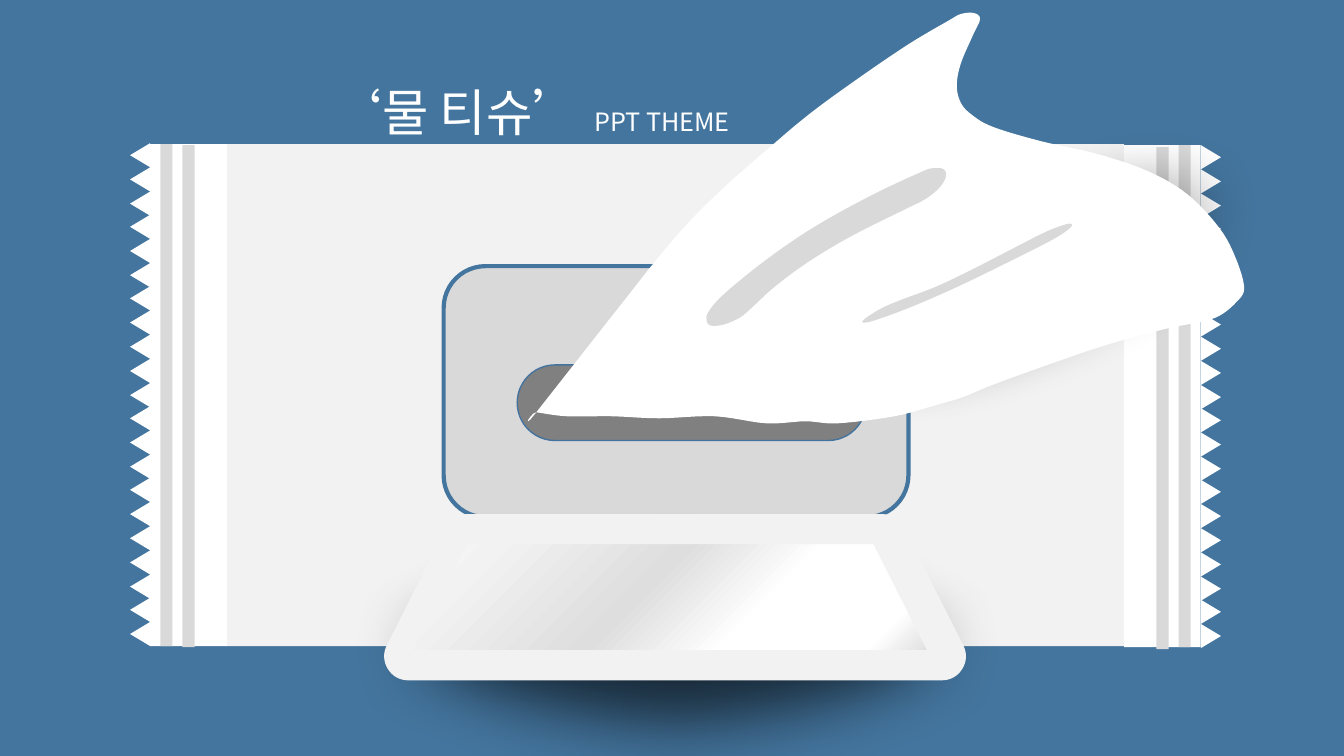
"""Build the wet tissue title slide."""
import dataclasses
import typing

import pptx
import pptx.dml.color
import pptx.enum.shapes
import pptx.enum.text
import pptx.oxml
import pptx.oxml.ns
import pptx.util

PX = 9144
KIND = pptx.enum.shapes.MSO_SHAPE
Point = typing.Tuple[int, int]
Stops = typing.Tuple[typing.Tuple[int, str], ...]


@dataclasses.dataclass(frozen=True)
class Theme:
    background: str = "44759E"
    white: str = "FFFFFF"
    film: str = "F2F2F2"
    grey: str = "D9D9D9"
    slot: str = "808080"
    slot_edge: str = "43739E"
    shadow: str = "000000"
    shadow_alpha: int = 67
    soft_edge: int = 50
    font: str = "Noto Sans CJK KR"
    title_size: int = 36
    subtitle_size: int = 18


@dataclasses.dataclass(frozen=True)
class Gradient:
    stops: Stops
    direction: str


@dataclasses.dataclass(frozen=True)
class Block:
    kind: KIND
    left: int
    top: int
    width: int
    height: int
    fill: str
    rotation: float = 0
    corner: typing.Optional[float] = None
    line: str = ""
    line_width: float = 0
    gradient: typing.Optional[Gradient] = None
    soft: bool = False


@dataclasses.dataclass(frozen=True)
class Outline:
    fill: str
    points: typing.Tuple[Point, ...]


THEME = Theme()

LID_BACK = Gradient(
    ((0, "D9D9D9"), (12, "FFFFFF"), (56, "FFFFFF"), (73, "DEDEDE"), (85, "F2F2F2"), (100, "FFFFFF")),
    '<a:lin ang="0" scaled="0"/>',
)
LID_FRONT = Gradient(
    ((0, "D9D9D9"), (12, "FFFFFF"), (34, "FFFFFF"), (55, "DEDEDE"), (85, "F2F2F2"), (100, "FFFFFF")),
    '<a:path path="circle"><a:fillToRect l="100000" t="100000"/></a:path>'
    '<a:tileRect r="-100000" b="-100000"/>',
)


def teeth(left: int, top: int, rotation: int) -> typing.List[Block]:
    """Return one column of sawtooth triangles."""
    return [
        Block(KIND.ISOSCELES_TRIANGLE, left, top + round(index * 475 / 20), 24, 20, THEME.white, rotation)
        for index in range(21)
    ]


def strip(left: int, top: int, width: int, fill: str) -> Block:
    """Return a full-height strip of the package."""
    return Block(KIND.RECTANGLE, left, top, width, 498, fill)


PACKAGE = [
    strip(225, 143, 890, THEME.film),
    *teeth(127, 144, 270),
    strip(149, 143, 76, THEME.white),
    strip(159, 143, 12, THEME.grey),
    strip(181, 144, 12, THEME.grey),
    *teeth(1189, 146, 90),
    strip(1115, 144, 76, THEME.white),
    strip(1169, 144, 12, THEME.grey),
    strip(1147, 146, 12, THEME.grey),
]
OPENING = [
    Block(KIND.OVAL, 891, -13, 269, 573, THEME.shadow, 69.9, soft=True),
    Block(KIND.ROUNDED_RECTANGLE, 440, 264, 461, 249, THEME.grey, line=THEME.background, line_width=3),
    Block(KIND.ROUNDED_RECTANGLE, 513, 362, 346, 75, THEME.slot, corner=0.5, line=THEME.slot_edge, line_width=1),
]
LID = [
    Block(KIND.OVAL, 527, 262, 289, 762, THEME.shadow, 90, soft=True),
    Block(KIND.TRAPEZOID, 405, 534, 529, 117, THEME.white, corner=0.505,
          line=THEME.film, line_width=34.5, gradient=LID_BACK),
    Block(KIND.TRAPEZOID, 400, 534, 529, 117, THEME.white, corner=0.505,
          line=THEME.film, line_width=8.5, gradient=LID_FRONT),
]
TISSUE = [
    Outline(THEME.white, (
        (1192, 319), (1153, 327), (1098, 342), (1042, 361), (984, 382), (955, 394), (928, 402),
        (887, 413), (831, 420), (799, 418), (760, 420), (709, 413), (654, 415), (607, 413),
        (562, 413), (532, 409), (532, 409), (631, 283), (646, 264), (679, 225), (717, 187),
        (759, 150), (803, 113), (851, 78), (901, 44), (940, 21), (953, 14), (966, 13), (972, 19),
        (965, 35), (953, 63), (949, 85), (953, 102), (964, 114), (985, 126), (1032, 140),
        (1089, 153), (1139, 170), (1178, 193), (1210, 227), (1226, 257), (1234, 286),
        (1226, 300), (1210, 313),
    )),
    Outline(THEME.grey, (
        (701, 318), (703, 309), (719, 291), (761, 257), (808, 225), (864, 194), (913, 171),
        (925, 167), (936, 168), (938, 176), (931, 187), (917, 198), (895, 209), (845, 234),
        (803, 259), (769, 284), (746, 305), (734, 315), (718, 322), (705, 323),
    )),
    Outline(THEME.grey, (
        (856, 320), (867, 318), (900, 306), (942, 288), (986, 267), (1036, 242), (1055, 231),
        (1063, 224), (1060, 222), (1047, 226), (1031, 233), (998, 250), (961, 269), (927, 285),
        (895, 297), (876, 305), (864, 312), (857, 317),
    )),
]


def colour(value: str) -> pptx.dml.color.RGBColor:
    """Turn a hex string into a colour."""
    return pptx.dml.color.RGBColor.from_string(value)


def drawing_xml(tag: str, attributes: str = "", content: str = "") -> typing.Any:
    """Make one DrawingML element."""
    namespace = pptx.oxml.ns.nsdecls("a")
    return pptx.oxml.parse_xml(f"<a:{tag} {namespace} {attributes}>{content}</a:{tag}>")


def paint(shape: typing.Any, fill: str) -> None:
    """Give a shape a plain fill without line or shadow."""
    shape.shadow.inherit = False
    shape.fill.solid()
    shape.fill.fore_color.rgb = colour(fill)
    shape.line.fill.background()


def soften(shape: typing.Any) -> None:
    """Make a shape translucent with a feathered edge."""
    properties = shape._element.spPr
    tint = properties.find(pptx.oxml.ns.qn("a:solidFill"))[0]
    tint.append(drawing_xml("alpha", f'val="{THEME.shadow_alpha * 1000}"'))
    effects = properties.find(pptx.oxml.ns.qn("a:effectLst"))
    effects.append(drawing_xml("softEdge", f'rad="{pptx.util.Pt(THEME.soft_edge)}"'))


def apply_gradient(shape: typing.Any, gradient: Gradient) -> None:
    """Replace the plain fill of a shape by a gradient."""
    stops = "".join(
        f'<a:gs pos="{position * 1000}"><a:srgbClr val="{value}"/></a:gs>'
        for position, value in gradient.stops
    )
    properties = shape._element.spPr
    plain = properties.find(pptx.oxml.ns.qn("a:solidFill"))
    content = f"<a:gsLst>{stops}</a:gsLst>{gradient.direction}"
    properties.replace(plain, drawing_xml("gradFill", 'rotWithShape="1"', content))


def draw_block(slide: typing.Any, block: Block) -> None:
    """Draw one preset shape."""
    frame = (value * PX for value in (block.left, block.top, block.width, block.height))
    shape = slide.shapes.add_shape(block.kind, *frame)
    shape.rotation = block.rotation
    paint(shape, block.fill)
    if block.corner is not None:
        shape.adjustments[0] = block.corner
    if block.line:
        shape.line.color.rgb = colour(block.line)
        shape.line.width = pptx.util.Pt(block.line_width)
        shape.line._get_or_add_ln().append(drawing_xml("round"))
    if block.gradient:
        apply_gradient(shape, block.gradient)
    if block.soft:
        soften(shape)


def smooth(points: typing.Sequence[Point], steps: int = 6) -> typing.List[Point]:
    """Run a closed Catmull-Rom curve through the points, in EMU."""
    curve = []
    for index in range(len(points)):
        corners = [points[(index + offset) % len(points)] for offset in (-1, 0, 1, 2)]
        for step in range(steps):
            t = step / steps
            curve.append(tuple(
                round(PX * (b + t * (c - a) / 2 + t * t * (2 * a - 5 * b + 4 * c - d) / 2
                            + t ** 3 * (3 * b - a - 3 * c + d) / 2))
                for a, b, c, d in zip(*corners)
            ))
    return curve


def draw_outline(slide: typing.Any, outline: Outline) -> None:
    """Draw one smooth freeform."""
    curve = smooth(outline.points)
    builder = slide.shapes.build_freeform(*curve[0])
    builder.add_line_segments(curve[1:], close=True)
    paint(builder.convert_to_shape(), outline.fill)


def draw_title(slide: typing.Any) -> None:
    """Draw the two-size title line."""
    box = slide.shapes.add_textbox(193 * PX, 46 * PX, 667 * PX, 90 * PX)
    box.text_frame.word_wrap = True
    paragraph = box.text_frame.paragraphs[0]
    paragraph.alignment = pptx.enum.text.PP_ALIGN.CENTER
    paragraph.line_spacing = 1.5
    for text, size in (("‘물 티슈’ ", THEME.title_size), ("PPT THEME", THEME.subtitle_size)):
        run = paragraph.add_run()
        run.text = text
        run.font.size = pptx.util.Pt(size)
        run.font.color.rgb = colour(THEME.white)
        run.font.name = THEME.font
        run.font._element.append(drawing_xml("ea", f'typeface="{THEME.font}"'))


def main() -> None:
    """Assemble and save the slide."""
    presentation = pptx.Presentation()
    presentation.slide_width, presentation.slide_height = 1333 * PX, 750 * PX
    slide = presentation.slides.add_slide(presentation.slide_layouts[6])
    slide.background.fill.solid()
    slide.background.fill.fore_color.rgb = colour(THEME.background)
    for block in PACKAGE:
        draw_block(slide, block)
    draw_title(slide)
    for block in OPENING:
        draw_block(slide, block)
    for outline in TISSUE:
        draw_outline(slide, outline)
    for block in LID:
        draw_block(slide, block)
    presentation.save("out.pptx")


if __name__ == "__main__":
    main()
